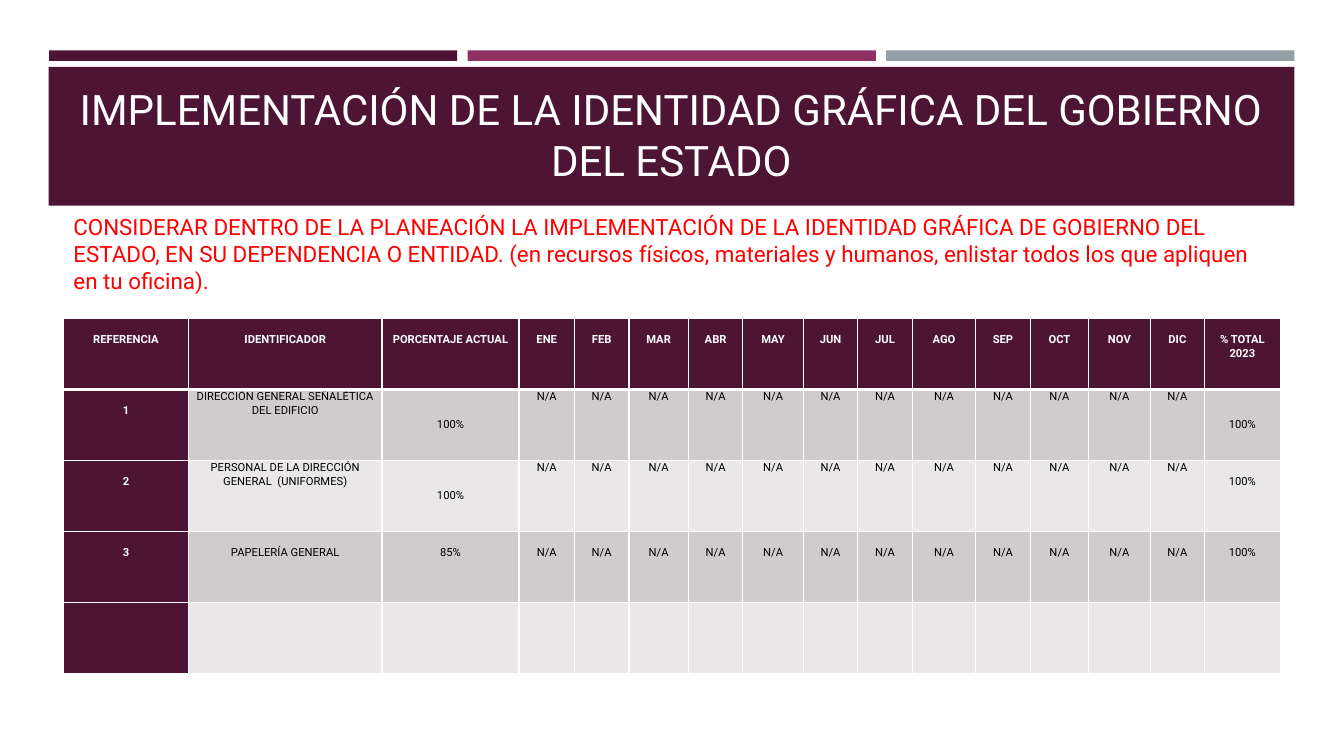
from pptx import Presentation
from pptx.dml.color import RGBColor
from pptx.enum import shapes, text
from pptx.oxml import parse_xml
from pptx.oxml.ns import nsdecls
from pptx.util import Pt

FONT = "Roboto"
COLORS = {
    "wine": "4D1434", "plum": "903163", "steel": "969FA7", "white": "FFFFFF",
    "red": "FF0000", "black": "000000", "dark_band": "D0CCCE", "light_band": "E9E7E8",
}
TITLE = "IMPLEMENTACIÓN DE LA IDENTIDAD GRÁFICA DEL GOBIERNO DEL ESTADO"
INSTRUCTION = (
    "CONSIDERAR DENTRO DE LA PLANEACIÓN LA IMPLEMENTACIÓN DE LA IDENTIDAD GRÁFICA "
    "DE GOBIERNO DEL ESTADO, EN SU DEPENDENCIA O ENTIDAD. (en recursos físicos, "
    "materiales y humanos, enlistar todos los que apliquen en tu oficina)."
)
MONTHS = "ENE FEB MAR ABR MAY JUN JUL AGO SEP OCT NOV DIC".split()
NO_DATA = ["N/A"] * len(MONTHS)
ROWS = [
    ["REFERENCIA", "IDENTIFICADOR", "PORCENTAJE ACTUAL", *MONTHS, "% TOTAL 2023"],
    ["1", "DIRECCIÓN GENERAL SEÑALÉTICA DEL EDIFICIO", "100%", *NO_DATA, "100%"],
    ["2", "PERSONAL DE LA DIRECCIÓN GENERAL  (UNIFORMES)", "100%", *NO_DATA, "100%"],
    ["3", "PAPELERÍA GENERAL", "85%", *NO_DATA, "100%"],
    [""] * (len(MONTHS) + 4),
]
# Lines of space above the text of each cell
LINES_ABOVE = [
    [1] * 16,
    [1, 0, 2] + [0] * 12 + [2],
    [1, 0, 2] + [0] * 12 + [1],
    [1] * 16,
    [0] * 16,
]
COLUMN_WIDTHS = [89.3, 138.2, 97.9, 39.6, 38.9, 42.5, 38.9, 43.2,
                 38.9, 38.9, 45.4, 38.9, 41.8, 43.9, 38.9, 54]
ROW_HEIGHT = 50.7
LINE_HEIGHT = 10


def rgb(name):
    return RGBColor.from_string(COLORS[name])


def add_run(paragraph, words, size, color, bold=False):
    run = paragraph.add_run()
    run.text = words
    run.font.name = FONT
    run.font.size = Pt(size)
    run.font.bold = bold
    run.font.color.rgb = rgb(color)


def add_band(slide, left, top, width, height, color):
    """Add a plain bar behind the title."""
    band = slide.shapes.add_shape(
        shapes.MSO_SHAPE.RECTANGLE, Pt(left), Pt(top), Pt(width), Pt(height))
    band.shadow.inherit = False
    band.fill.solid()
    band.fill.fore_color.rgb = rgb(color)
    band.line.fill.background()
    slide.shapes.title.element.addprevious(band.element)


def set_title(slide):
    title = slide.shapes.title
    title.left, title.top, title.width, title.height = Pt(45.4), Pt(57.6), Pt(868.3), Pt(77.8)
    frame = title.text_frame
    frame.word_wrap = True
    frame.auto_size = text.MSO_AUTO_SIZE.NONE
    frame.vertical_anchor = text.MSO_ANCHOR.BOTTOM
    frame.paragraphs[0].alignment = text.PP_ALIGN.CENTER
    add_run(frame.paragraphs[0], TITLE, 30, "white")


def add_instruction(slide):
    instruction = slide.shapes.add_textbox(Pt(45.4), Pt(149), Pt(868.3), Pt(46))
    frame = instruction.text_frame
    frame.word_wrap = True
    frame.auto_size = text.MSO_AUTO_SIZE.SHAPE_TO_FIT_TEXT
    add_run(frame.paragraphs[0], INSTRUCTION, 16, "red")


def set_borders(cell, bottom_width, top_width):
    widths = {"lnL": 1, "lnR": 1, "lnT": top_width, "lnB": bottom_width}
    properties = cell._tc.get_or_add_tcPr()
    for position, (side, width) in enumerate(widths.items()):
        properties.insert(position, parse_xml(
            f'<a:{side} {nsdecls("a")} w="{Pt(width)}"><a:solidFill>'
            f'<a:srgbClr val="{COLORS["white"]}"/></a:solidFill></a:{side}>'))


def fill_cell(cell, words, row, column):
    heading = row == 0 or column == 0
    band = "dark_band" if row % 2 else "light_band"
    cell.fill.solid()
    cell.fill.fore_color.rgb = rgb("wine" if heading else band)
    cell.margin_left = cell.margin_right = Pt(5)
    cell.margin_top = Pt(LINES_ABOVE[row][column] * LINE_HEIGHT)
    cell.margin_bottom = 0
    set_borders(cell, 3 if row == 0 else 1, 3 if row == 1 else 1)
    if words:
        paragraph = cell.text_frame.paragraphs[0]
        paragraph.alignment = text.PP_ALIGN.CENTER
        paragraph.line_spacing = 1.07
        add_run(paragraph, words, 8, "white" if heading else "black", heading)


def add_progress_table(slide):
    table = slide.shapes.add_table(
        len(ROWS), len(COLUMN_WIDTHS), Pt(45.4), Pt(227.5),
        Pt(sum(COLUMN_WIDTHS)), Pt(ROW_HEIGHT * len(ROWS))).table
    for column, width in zip(table.columns, COLUMN_WIDTHS):
        column.width = Pt(width)
    for row, entries in enumerate(ROWS):
        table.rows[row].height = Pt(ROW_HEIGHT)
        for column, words in enumerate(entries):
            fill_cell(table.cell(row, column), words, row, column)


def main():
    deck = Presentation()
    deck.slide_width, deck.slide_height = Pt(960), Pt(540)
    slide = deck.slides.add_slide(deck.slide_layouts[5])
    for place, color in enumerate(["wine", "plum", "steel"]):
        add_band(slide, 35 + place * 299, 36, 291.6, 7.6, color)
    add_band(slide, 34.8, 47.8, 889.8, 99.2, "wine")
    set_title(slide)
    add_instruction(slide)
    add_progress_table(slide)
    deck.save("out.pptx")


if __name__ == "__main__":
    main()
